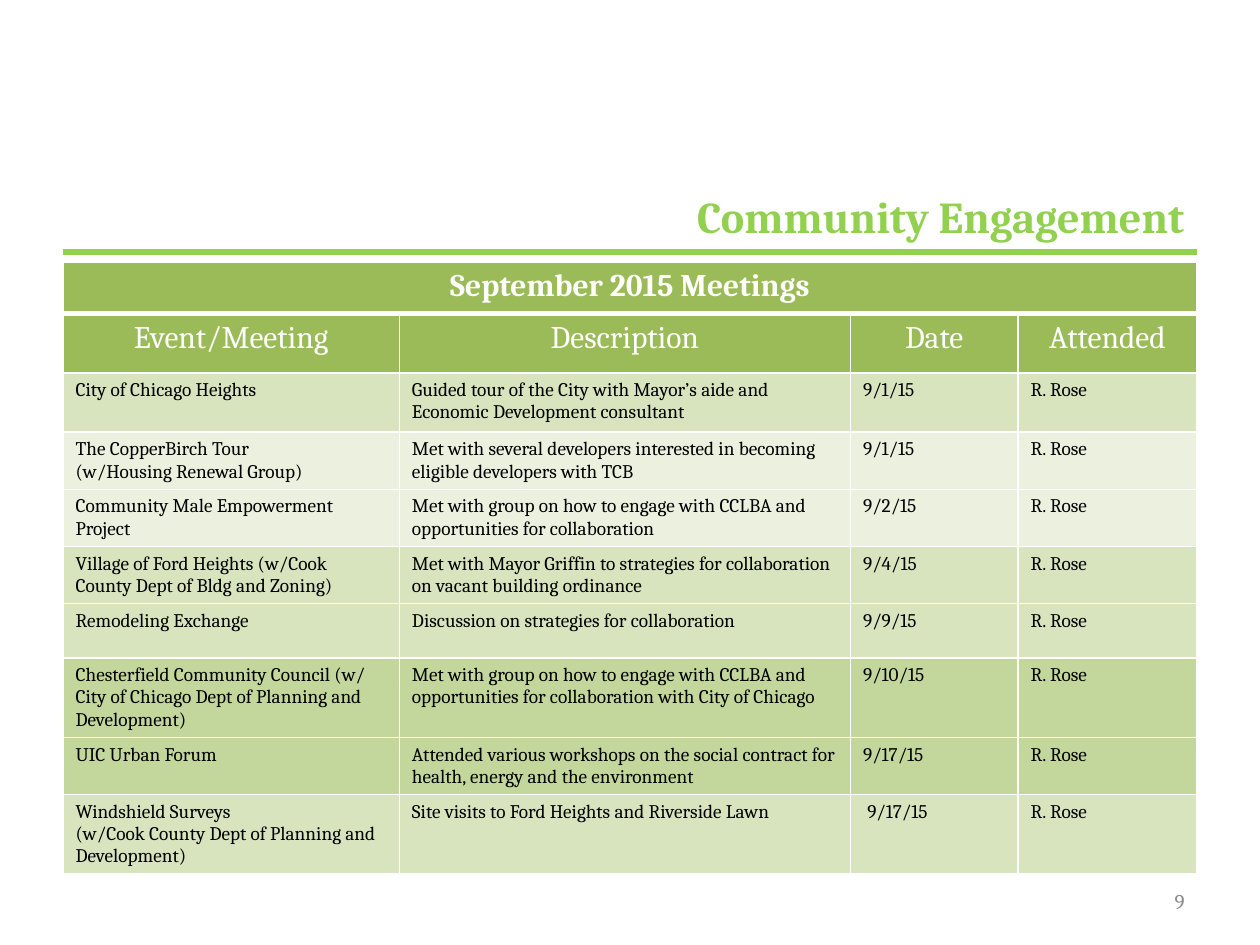
from lxml import etree
from pptx import Presentation, util as u
from pptx.dml.color import RGBColor
from pptx.enum import shapes, text
from pptx.oxml import ns

FONT = "Cambria"
LIME = RGBColor(0x92, 0xD0, 0x50)
OLIVE = RGBColor(0x9B, 0xBB, 0x59)
MEDIUM = RGBColor(0xC3, 0xD6, 0x9B)
LIGHT = RGBColor(0xD7, 0xE4, 0xBD)
PALE = RGBColor(0xEB, 0xF1, 0xDE)
WHITE = RGBColor(0xFF, 0xFF, 0xFF)
BLACK = RGBColor(0, 0, 0)
GRAY = RGBColor(0x8C, 0x8C, 0x8C)

WIDTH, HEIGHT = u.Inches(10), u.Inches(7.5)
MARGIN = int(WIDTH * 0.05)
CONTENT = WIDTH - 2 * MARGIN

COLUMNS = [2.67, 3.58, 1.33, 1.42]
ROWS = [0.41, 0.47, 0.47, 0.41, 0.41, 0.41, 0.43, 0.43, 0.43, 0.41]
CAPTION = "September 2015 Meetings"
HEADINGS = ["Event/Meeting", "Description", "Date", "Attended"]
ATTENDEE = "R. Rose"
MEETINGS = [
    (LIGHT, "City of Chicago Heights",
     "Guided tour of the City with Mayor’s aide and Economic Development consultant", "9/1/15"),
    (PALE, "The CopperBirch Tour\n(w/Housing Renewal Group)",
     "Met with several developers interested in becoming eligible developers with TCB", "9/1/15"),
    (PALE, "Community Male Empowerment Project",
     "Met with group on how to engage with CCLBA and opportunities for collaboration", "9/2/15"),
    (LIGHT, "Village of Ford Heights (w/Cook County Dept of Bldg and Zoning)",
     "Met with Mayor Griffin to strategies for collaboration on vacant building ordinance", "9/4/15"),
    (LIGHT, "Remodeling Exchange",
     "Discussion on strategies for collaboration", "9/9/15"),
    (MEDIUM, "Chesterfield Community Council (w/ City of Chicago Dept of Planning and Development)",
     "Met with group on how to engage with CCLBA and opportunities for collaboration "
     "with City of Chicago", "9/10/15"),
    (MEDIUM, "UIC Urban Forum",
     "Attended various workshops on the social contract for health, energy and the environment",
     "9/17/15"),
    (LIGHT, "Windshield Surveys\n(w/Cook County Dept of Planning and Development)",
     "Site visits to Ford Heights and Riverside Lawn", " 9/17/15"),
]


def write(frame, words, size, color, align=text.PP_ALIGN.LEFT, bold=False):
    frame.text = words
    for para in frame.paragraphs:
        para.alignment = align
        for span in para.runs:
            font = span.font
            font.name, font.size, font.bold = FONT, u.Pt(size), bold
            font.color.rgb = color


def set_borders(cell, top=1, bottom=1):
    """Draw white cell edges, with widths in points."""
    properties = cell._tc.get_or_add_tcPr()
    for place, (side, points) in enumerate(zip("LRTB", (1, 1, top, bottom))):
        edge = etree.Element(ns.qn(f"a:ln{side}"), w=str(u.Pt(points)))
        fill = etree.SubElement(edge, ns.qn("a:solidFill"))
        etree.SubElement(fill, ns.qn("a:srgbClr"), val=str(WHITE))
        properties.insert(place, edge)


def add_heading(page, left, top, width, height):
    """Place the title and the rule along the bottom of its box."""
    title = page.shapes.title
    title.left, title.top, title.width, title.height = left, top, width, height
    frame = title.text_frame
    frame.word_wrap = True
    frame.auto_size = text.MSO_AUTO_SIZE.NONE
    frame.vertical_anchor = text.MSO_ANCHOR.BOTTOM
    frame.margin_bottom = int(height * 0.08)
    write(frame, "Community Engagement", 25.2, LIME, text.PP_ALIGN.RIGHT, True)

    rule = page.shapes.add_connector(
        shapes.MSO_CONNECTOR.STRAIGHT, left, top + height, left + width, top + height)
    rule.line.color.rgb = LIME
    rule.line.width = u.Pt(3)
    etree.SubElement(rule._element.spPr, ns.qn("a:effectLst"))


def add_meetings(page, left, top, width):
    table = page.shapes.add_table(
        len(ROWS), len(COLUMNS), left, top, width, u.Inches(sum(ROWS))).table
    for column, share in zip(table.columns, COLUMNS):
        column.width = int(width * share / sum(COLUMNS))
    for row, height in zip(table.rows, ROWS):
        row.height = u.Inches(height)

    table.cell(0, 0).merge(table.cell(0, len(COLUMNS) - 1))
    lines = [(OLIVE, CAPTION), (OLIVE, *HEADINGS)]
    lines += [(*meeting, ATTENDEE) for meeting in MEETINGS]
    for index, (row, (fill, *words)) in enumerate(zip(table.rows, lines)):
        for cell in row.cells:
            cell.fill.solid()
            cell.fill.fore_color.rgb = fill
            set_borders(cell, top=3 if index == 1 else 1, bottom=3 if index == 0 else 1)
        for cell, entry in zip(row.cells, words):
            if index < 2:
                write(cell.text_frame, entry, 18, WHITE, text.PP_ALIGN.CENTER, index == 0)
            else:
                write(cell.text_frame, entry, 11, BLACK)


def add_page_number(page, left, top, width, height):
    frame = page.shapes.add_textbox(left, top, width, height).text_frame
    frame.word_wrap = True
    frame.vertical_anchor = text.MSO_ANCHOR.MIDDLE
    write(frame, "9", 12, GRAY, text.PP_ALIGN.RIGHT)


def main():
    deck = Presentation()
    deck.slide_width, deck.slide_height = WIDTH, HEIGHT
    page = deck.slides.add_slide(deck.slide_layouts.get_by_name("Title Only"))
    add_heading(page, MARGIN, u.Inches(1), CONTENT, u.Inches(1))
    add_meetings(page, MARGIN, u.Inches(2.08), CONTENT)
    number_width = u.Inches(2.33)
    add_page_number(page, WIDTH - MARGIN - number_width, u.Inches(6.95),
                    number_width, u.Inches(0.4))
    deck.save("out.pptx")


if __name__ == "__main__":
    main()
